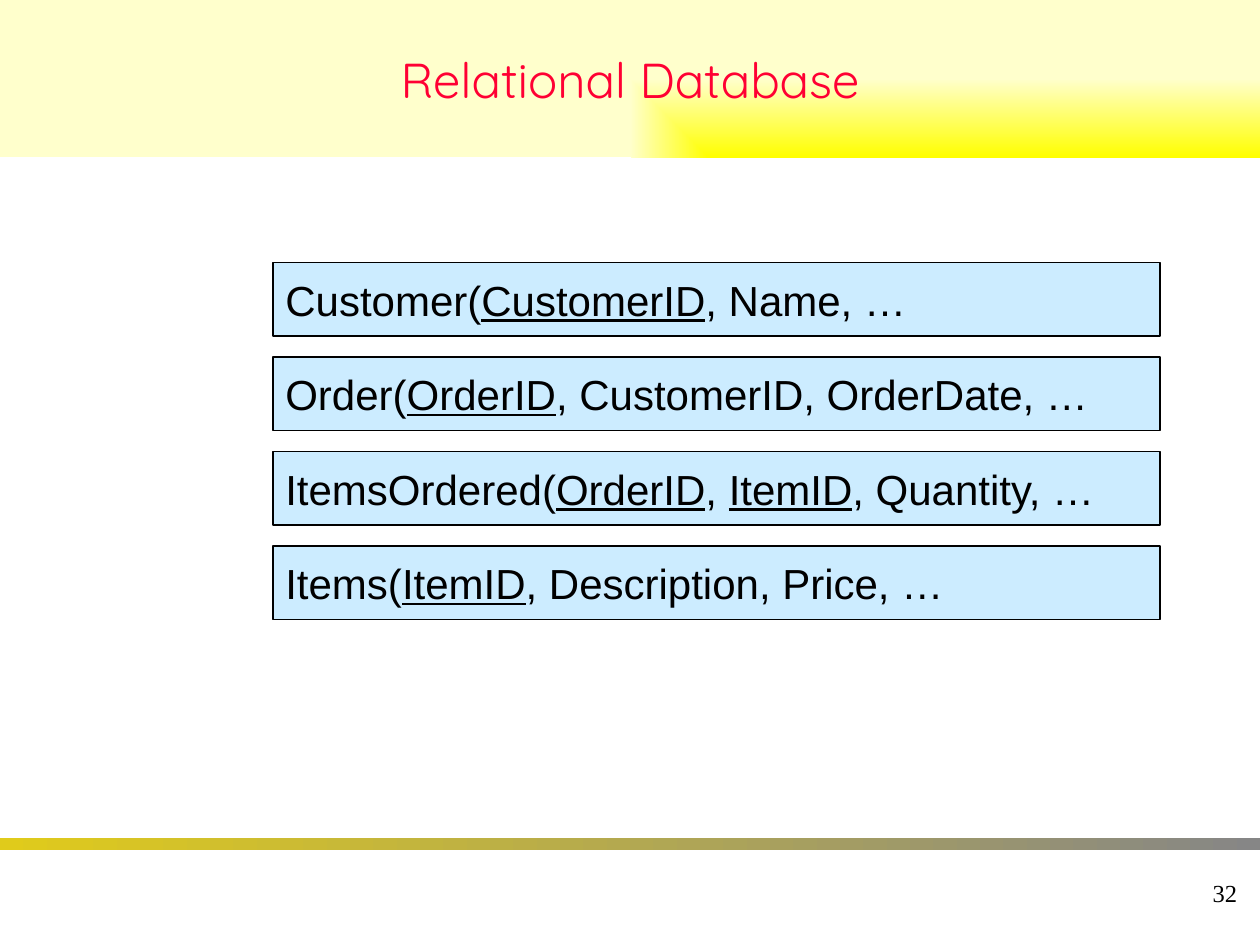
import pptx
import pptx.dml.color
import pptx.enum.shapes
import pptx.enum.text
import pptx.oxml
import pptx.oxml.ns
import pptx.util

COLUMNS, ROWS = 120, 90
ALIGN = pptx.enum.text.PP_ALIGN
# Each relation: (name, key attributes, other attributes)
RELATIONS = [
    ("Customer", ["CustomerID"], "Name"),
    ("Order", ["OrderID"], "CustomerID, OrderDate"),
    ("ItemsOrdered", ["OrderID", "ItemID"], "Quantity"),
    ("Items", ["ItemID"], "Description, Price"),
]


def color(hex_string):
    return pptx.dml.color.RGBColor.from_string(hex_string)


def add_text(paragraph, text, *, font, size, ink="000000", underline=False, align=ALIGN.LEFT):
    paragraph.alignment = align
    run = paragraph.add_run()
    run.text = text
    run.font.name = font
    run.font.size = pptx.util.Pt(size)
    run.font.color.rgb = color(ink)
    run.font.underline = underline


def fill_gradient(shape, start, end):
    """Fill the shape from left to right."""
    shape.fill.gradient()
    shape.fill.gradient_angle = 0
    for stop, hex_string in zip(shape.fill.gradient_stops, (start, end)):
        stop.color.rgb = color(hex_string)


def spread_from_corner(shape):
    """Let the shape's gradient start at its bottom right corner."""
    linear = shape.element.spPr.find(".//" + pptx.oxml.ns.qn("a:lin"))
    corner = pptx.oxml.parse_xml(
        f'<a:path {pptx.oxml.ns.nsdecls("a")} path="rect">'
        '<a:fillToRect l="100000" t="100000"/></a:path>')
    linear.getparent().replace(linear, corner)


class DatabaseSlide:
    title_font, body_font, number_font = "Quicksand", "Arial", "Times New Roman"
    title_ink, box_fill = "FF0033", "CCECFF"

    def __init__(self, deck):
        self.column = deck.slide_width / COLUMNS
        self.row = deck.slide_height / ROWS
        self.slide = deck.slides.add_slide(deck.slide_layouts[5])

    def area(self, left, top, width, height):
        return (round(left * self.column), round(top * self.row),
                round(width * self.column), round(height * self.row))

    def rectangle(self, *cells):
        shape = self.slide.shapes.add_shape(
            pptx.enum.shapes.MSO_SHAPE.RECTANGLE, *self.area(*cells))
        shape.shadow.inherit = False
        return shape

    def rule(self, *cells):
        rule = self.rectangle(*cells)
        fill_gradient(rule, "E0CB1B", "868686")
        rule.line.fill.background()

    def page_number(self, number, *cells):
        frame = self.slide.shapes.add_textbox(*self.area(*cells)).text_frame
        frame.word_wrap = False
        frame.vertical_anchor = pptx.enum.text.MSO_ANCHOR.MIDDLE
        add_text(frame.paragraphs[0], number, font=self.number_font, size=14, align=ALIGN.RIGHT)

    def title(self, text, *cells):
        title = self.slide.shapes.title
        title.left, title.top, title.width, title.height = self.area(*cells)
        fill_gradient(title, "FFFF00", "FFFFCC")
        spread_from_corner(title)
        title.text_frame.vertical_anchor = pptx.enum.text.MSO_ANCHOR.MIDDLE
        add_text(title.text_frame.paragraphs[0], text, font=self.title_font, size=28,
                 ink=self.title_ink, align=ALIGN.CENTER)

    def relation(self, name, keys, others, *cells):
        box = self.rectangle(*cells)
        box.fill.solid()
        box.fill.fore_color.rgb = color(self.box_fill)
        box.line.color.rgb = color("000000")
        box.line.width = pptx.util.Pt(1)
        box.text_frame.word_wrap = False
        box.text_frame.vertical_anchor = pptx.enum.text.MSO_ANCHOR.MIDDLE
        schema = box.text_frame.paragraphs[0]
        style = {"font": self.body_font, "size": 24}
        lead = f"{name}("
        for key in keys:
            add_text(schema, lead, **style)
            add_text(schema, key, underline=True, **style)
            lead = ", "
        add_text(schema, f", {others}, …", **style)


def main():
    deck = pptx.Presentation()
    deck.slide_width = pptx.util.Inches(10)
    deck.slide_height = pptx.util.Inches(7.5)
    page = DatabaseSlide(deck)
    page.title("Relational Database", 0, 0, COLUMNS, 15)
    page.rule(0, 79.8, COLUMNS, 1.2)
    page.page_number("32", 94, 82, 25, 6)
    for index, (name, keys, others) in enumerate(RELATIONS):
        page.relation(name, keys, others, 26, 25 + 9 * index, 84.5, 7)
    deck.save("out.pptx")


if __name__ == "__main__":
    main()
